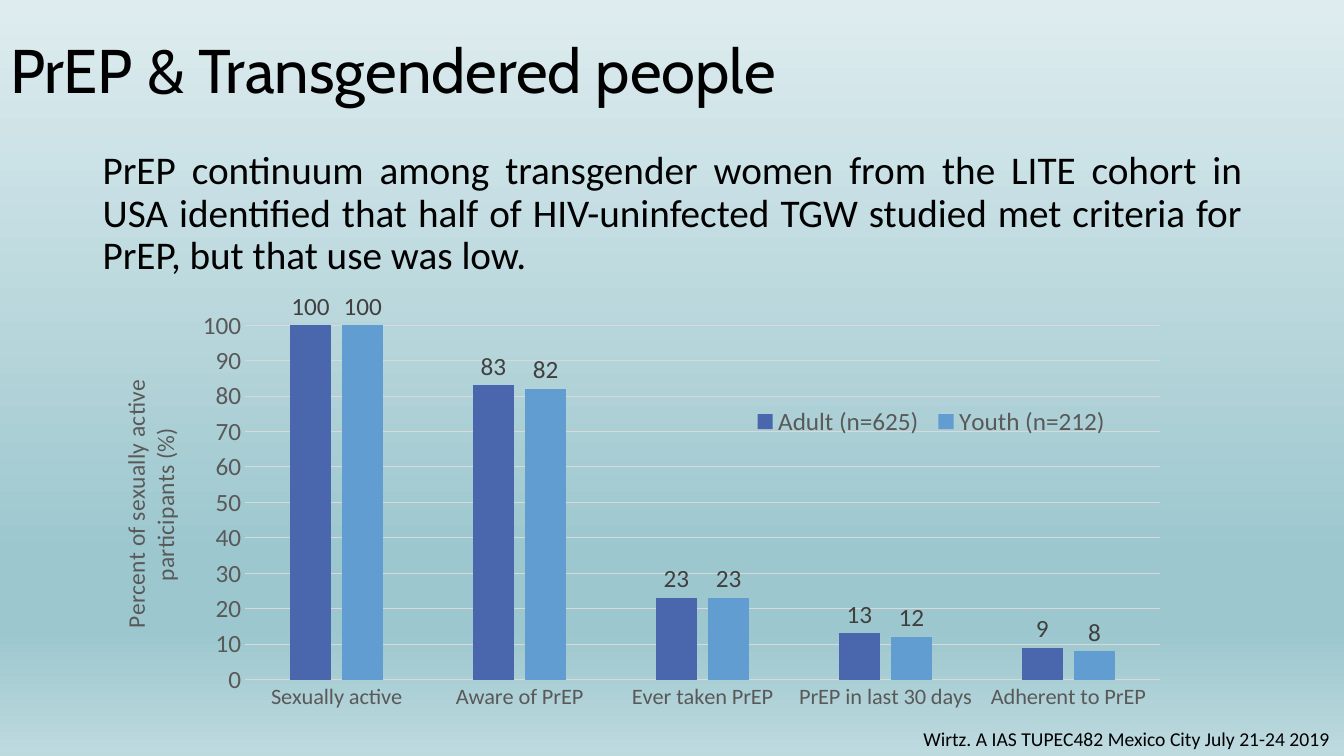
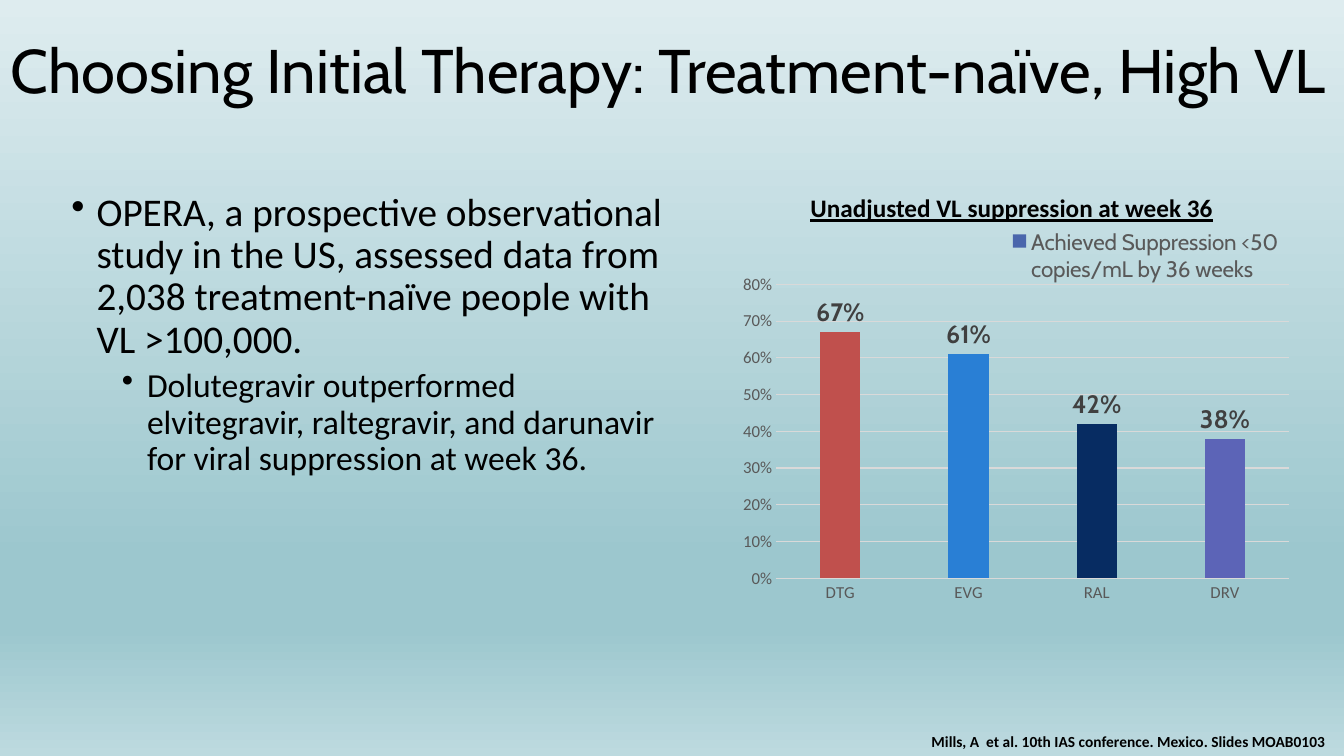
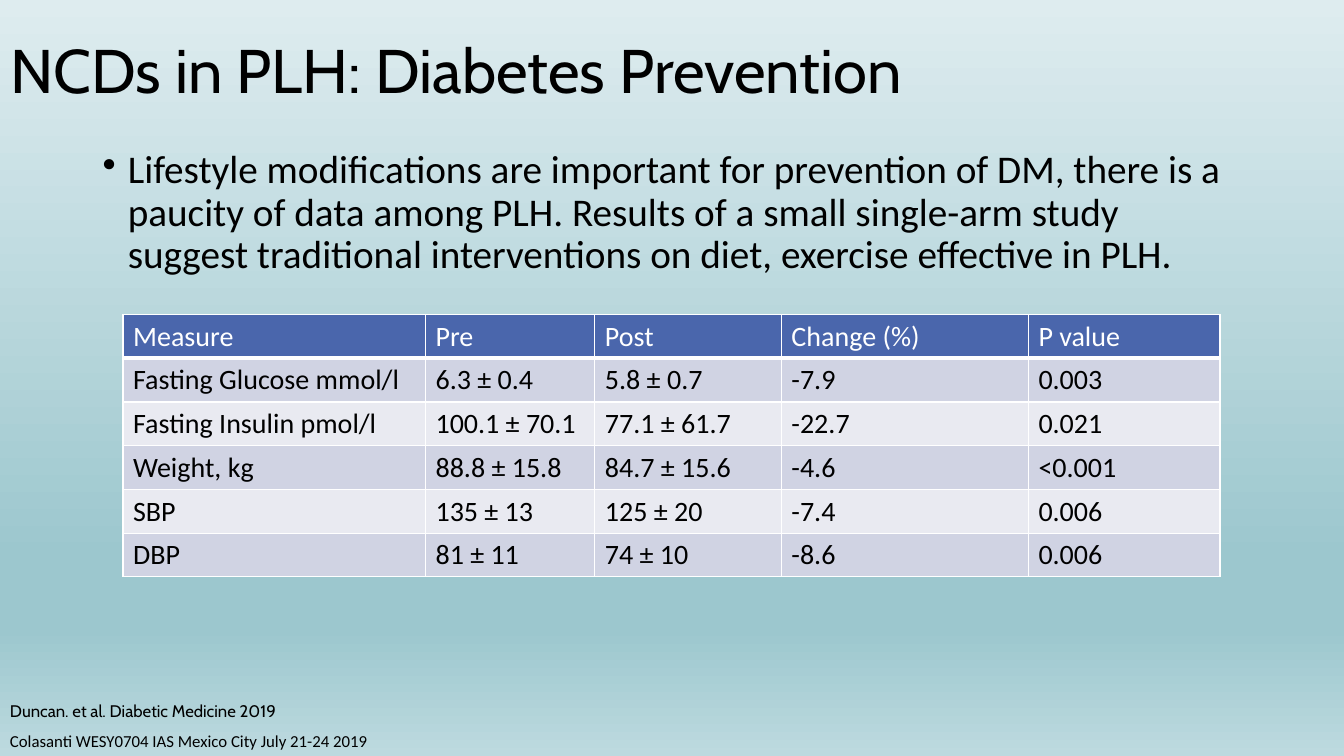
from pptx import Presentation
from pptx.chart.data import CategoryChartData
from pptx.dml.color import RGBColor
from pptx.enum.chart import XL_CHART_TYPE as ChartType
from pptx.enum.chart import XL_LABEL_POSITION as LabelPosition
from pptx.enum.chart import XL_LEGEND_POSITION as LegendPosition
from pptx.enum.chart import XL_TICK_MARK as TickMark
from pptx.enum.text import MSO_ANCHOR as Anchor
from pptx.enum.text import MSO_AUTO_SIZE as AutoSize
from pptx.enum.text import PP_ALIGN as Align
from pptx.oxml import parse_xml
from pptx.oxml.ns import nsdecls
from pptx.util import Inches, Pt

BLACK = RGBColor(0x00, 0x00, 0x00)
WHITE = RGBColor(0xFF, 0xFF, 0xFF)
INDIGO = RGBColor(0x4A, 0x66, 0xAC)
SKY = RGBColor(0x62, 0x9D, 0xD1)
RED = RGBColor(0xC0, 0x50, 0x4D)
BLUE = RGBColor(0x29, 0x7F, 0xD5)
NAVY = RGBColor(0x07, 0x2C, 0x62)
VIOLET = RGBColor(0x5C, 0x64, 0xB7)
BAND_DARK = RGBColor(0xD0, 0xD3, 0xE3)
BAND_LIGHT = RGBColor(0xE9, 0xEA, 0xF1)
GRID_GREY = RGBColor(0xD9, 0xD9, 0xD9)
AXIS_GREY = RGBColor(0x59, 0x59, 0x59)
LABEL_GREY = RGBColor(0x40, 0x40, 0x40)
BACKGROUND_STOPS = [(0, "DEECEF"), (74, "9CC7CE"), (83, "9CC7CE"), (100, "BDDADF")]

HEAD_FONT = "Cabin"
BODY_FONT = "Calibri"


# ---- Text ----

def set_font(font, size, color=BLACK, name=BODY_FONT, bold=False):
    font.size = Pt(size)
    font.name = name
    font.bold = bold
    font.color.rgb = color


def write_text(frame, text, size=28, color=BLACK, name=BODY_FONT, bold=False,
               underline=None, align=Align.LEFT, spacing=None, before=0,
               level=0, bullet_indent=None):
    """Add one paragraph to the frame, using the empty first one if there is one."""
    para = frame.paragraphs[0]
    if para.text:
        para = frame.add_paragraph()
    para.level = level
    if bullet_indent is not None:
        props = para._p.get_or_add_pPr()
        props.set("marL", str(Inches(bullet_indent)))
        props.set("indent", str(Inches(-0.25)))
        props.append(parse_xml(f'<a:buChar {nsdecls("a")} char="•"/>'))
    para.alignment = align
    para.space_before = Pt(before)
    if spacing:
        para.line_spacing = spacing
    span = para.add_run()
    span.text = text
    set_font(span.font, size, color, name, bold)
    span.font.underline = underline


def add_box(page, left, top, width, height):
    box = page.shapes.add_textbox(
        Inches(left), Inches(top), Inches(width), Inches(height))
    box.text_frame.word_wrap = True
    return box.text_frame


def add_citation(page, left, top, width, text, **style):
    write_text(add_box(page, left, top, width, 0.3), text, **style)


# ---- Shared page parts ----

def set_background(master):
    fill = master.background.fill
    fill.gradient()
    fill.gradient_angle = 270
    stops = master.element.xpath("p:cSld/p:bg//a:gsLst")[0]
    for stop in list(stops):
        stops.remove(stop)
    for percent, color in BACKGROUND_STOPS:
        stops.append(parse_xml(
            f'<a:gs {nsdecls("a")} pos="{percent * 1000}">'
            f'<a:srgbClr val="{color}"/></a:gs>'))


def add_page(deck, title, width=11.5):
    page = deck.slides.add_slide(deck.slide_layouts.get_by_name("Title Only"))
    box = page.shapes.title
    box.left, box.top = Inches(0), Inches(0)
    box.width, box.height = Inches(width), Inches(1.45)
    frame = box.text_frame
    frame.auto_size = AutoSize.NONE
    frame.vertical_anchor = Anchor.MIDDLE
    write_text(frame, title, size=44, name=HEAD_FONT, spacing=0.9)
    return page


# ---- Charts ----

def place_part(chart, query, index, x, y, width=None, height=None, inner=False):
    """Fix a chart part at fractions of the chart's size."""
    part = chart.element.xpath(query)[0]
    for old in part.xpath("c:layout"):
        part.remove(old)
    target = '<c:layoutTarget val="inner"/>' if inner else ""
    size = f'<c:w val="{width}"/><c:h val="{height}"/>' if width else ""
    part.insert(index, parse_xml(
        f'<c:layout {nsdecls("c")}><c:manualLayout>{target}'
        '<c:xMode val="edge"/><c:yMode val="edge"/>'
        f'<c:x val="{x}"/><c:y val="{y}"/>{size}</c:manualLayout></c:layout>'))


def style_axis(axis, size):
    axis.major_tick_mark = axis.minor_tick_mark = TickMark.NONE
    set_font(axis.tick_labels.font, size, AXIS_GREY)


def add_column_chart(page, area, categories, series, colors, number_format, top_value,
                     step, axis_sizes, plot_area, legend_area, legend_position,
                     legend_style, label_style):
    data = CategoryChartData(number_format=number_format)
    data.categories = categories
    for name, values in series:
        data.add_series(name, values)
    chart = page.shapes.add_chart(
        ChartType.COLUMN_CLUSTERED, *map(Inches, area), data).chart
    set_font(chart.font, 18)
    chart.has_title = False

    # Axes
    category_axis, value_axis = chart.category_axis, chart.value_axis
    style_axis(category_axis, axis_sizes[0])
    style_axis(value_axis, axis_sizes[1])
    value_axis.minimum_scale, value_axis.maximum_scale = 0, top_value
    value_axis.major_unit = step
    value_axis.tick_labels.number_format = number_format
    value_axis.tick_labels.number_format_is_linked = False
    value_axis.format.line.fill.background()
    for line in (category_axis.format.line, value_axis.major_gridlines.format.line):
        line.color.rgb = GRID_GREY
        line.width = Pt(0.75)

    # Columns and their labels
    plot = chart.plots[0]
    plot.gap_width, plot.overlap = 219, -27
    plot.vary_by_categories = False
    for column, color in zip(plot.series, colors):
        column.format.fill.solid()
        column.format.fill.fore_color.rgb = color
    plot.has_data_labels = True
    labels = plot.data_labels
    labels.show_value = True
    labels.position = LabelPosition.OUTSIDE_END
    labels.number_format = number_format
    labels.number_format_is_linked = False
    set_font(labels.font, 18, LABEL_GREY, **label_style)

    # Legend
    chart.has_legend = True
    chart.legend.position = legend_position
    chart.legend.include_in_layout = False
    set_font(chart.legend.font, color=AXIS_GREY, **legend_style)
    place_part(chart, ".//c:plotArea", 0, *plot_area, inner=True)
    place_part(chart, ".//c:legend", 1, *legend_area)
    return chart


def add_axis_title(chart, text, x, y):
    frame = chart.value_axis.axis_title.text_frame
    write_text(frame, text, size=17, color=AXIS_GREY, align=Align.CENTER)
    title = ".//c:valAx/c:title"
    body = chart.element.xpath(title + "//a:bodyPr")[0]
    body.set("rot", "-5400000")
    body.set("vert", "horz")
    place_part(chart, title, 1, x, y)


# ---- Table ----

def set_borders(cell, bottom):
    props = cell._tc.get_or_add_tcPr()
    widths = {"lnL": 1, "lnR": 1, "lnT": 1, "lnB": bottom}
    for index, (side, width) in enumerate(widths.items()):
        props.insert(index, parse_xml(
            f'<a:{side} {nsdecls("a")} w="{Pt(width)}"><a:solidFill>'
            f'<a:srgbClr val="{WHITE}"/></a:solidFill></a:{side}>'))


def add_measure_table(page, left, top, widths, row_height, rows):
    table = page.shapes.add_table(
        len(rows), len(widths), Inches(left), Inches(top),
        Inches(sum(widths)), Inches(row_height * len(rows))).table
    table.horz_banding = False
    for column, width in zip(table.columns, widths):
        column.width = Inches(width)
    for r, texts in enumerate(rows):
        header = r == 0
        band = BAND_DARK if r % 2 else BAND_LIGHT
        for c, text in enumerate(texts):
            cell = table.cell(r, c)
            cell.fill.solid()
            cell.fill.fore_color.rgb = INDIGO if header else band
            write_text(cell.text_frame, text, size=20,
                       color=WHITE if header else BLACK)
            set_borders(cell, 3 if header else 1)


# ---- Pages ----

def build_continuum_page(deck):
    page = add_page(deck, "PrEP & Transgendered people")
    write_text(
        add_box(page, 0.92, 1.45, 11.5, 1.4),
        "PrEP continuum among transgender women from the LITE cohort in USA "
        "identified that half of HIV-uninfected TGW studied met criteria for PrEP, "
        "but that use was low.", align=Align.JUSTIFY, spacing=0.9)
    chart = add_column_chart(
        page, (0.92, 2.89, 10.8, 4.52),
        ["Sexually active", "Aware of PrEP", "Ever taken PrEP",
         "PrEP in last 30 days", "Adherent to PrEP"],
        [("Adult (n=625)", [100, 83, 23, 13, 9]),
         ("Youth (n=212)", [100, 82, 23, 12, 8])],
        [INDIGO, SKY], "0", 100, 10, axis_sizes=(16, 18),
        plot_area=(0.14, 0.06, 0.84, 0.79), legend_area=(0.6, 0.23, 0.34, 0.09),
        legend_position=LegendPosition.BOTTOM, legend_style={"size": 18},
        label_style={})
    add_axis_title(chart, "Percent of sexually active participants (%)", 0.02, 0.18)
    add_citation(page, 9.06, 7.16, 4.27,
                 "Wirtz. A IAS TUPEC482 Mexico City July 21-24 2019", size=14)


def build_therapy_page(deck):
    page = add_page(deck, "Choosing Initial Therapy: Treatment-naïve, High VL", 13.33)
    frame = add_box(page, 0.61, 1.86, 6.19, 4.76)
    write_text(
        frame, "OPERA, a prospective observational study in the US, assessed data "
        "from 2,038 treatment-naïve people with VL >100,000.",
        spacing=0.9, bullet_indent=0.25)
    write_text(
        frame, "Dolutegravir outperformed elvitegravir, raltegravir, and darunavir "
        "for viral suppression at week 36.",
        size=24, spacing=0.9, before=5, level=1, bullet_indent=0.75)
    chart = add_column_chart(
        page, (7.37, 2.26, 5.47, 3.74), ["DTG", "EVG", "RAL", "DRV"],
        [("Achieved Suppression <50 copies/mL by 36 weeks", [0.67, 0.61, 0.42, 0.38])],
        [INDIGO], "0%", 0.8, 0.1, axis_sizes=(12, 12),
        plot_area=(0.06, 0.15, 0.93, 0.78), legend_area=(0.47, 0, 0.52, 0.15),
        legend_position=LegendPosition.TOP,
        legend_style={"size": 16, "name": HEAD_FONT},
        label_style={"name": HEAD_FONT, "bold": True})
    for index, color in enumerate([RED, BLUE, NAVY, VIOLET]):
        fill = chart.plots[0].series[0].points[index].format.fill
        fill.solid()
        fill.fore_color.rgb = color
    write_text(add_box(page, 7.94, 1.86, 4.64, 0.4),
               "Unadjusted VL suppression at week 36",
               size=18, bold=True, underline=True)
    add_citation(page, 9.14, 7.21, 4.19,
                 "Mills, A  et al. 10th IAS conference. Mexico. Slides MOAB0103",
                 size=11, bold=True)


def build_diabetes_page(deck):
    page = add_page(deck, "NCDs in PLH: Diabetes Prevention")
    write_text(
        add_box(page, 0.92, 1.44, 11.5, 1.4),
        "Lifestyle modifications are important for prevention of DM, there is a "
        "paucity of data among PLH. Results of a small single-arm study suggest "
        "traditional interventions on diet, exercise effective in PLH.",
        spacing=0.9, bullet_indent=0.25)
    add_measure_table(page, 1.22, 3.12, [3, 1.68, 1.85, 2.45, 1.9], 0.43, [
        ["Measure", "Pre", "Post", "Change (%)", "P value"],
        ["Fasting Glucose mmol/l", "6.3 ± 0.4", "5.8 ± 0.7", "-7.9", "0.003"],
        ["Fasting Insulin pmol/l", "100.1 ± 70.1", "77.1 ± 61.7", "-22.7", "0.021"],
        ["Weight, kg", "88.8 ± 15.8", "84.7 ± 15.6", "-4.6", "<0.001"],
        ["SBP", "135 ± 13", "125 ± 20", "-7.4", "0.006"],
        ["DBP", "81 ± 11", "74 ± 10", "-8.6", "0.006"],
    ])
    add_citation(page, 0, 6.9, 4.65, "Duncan. et al. Diabetic Medicine 2019",
                 size=12, name=HEAD_FONT)
    add_citation(page, 0, 7.2, 4.65,
                 "Colasanti WESY0704 IAS Mexico City July 21-24 2019", size=12)


def main():
    deck = Presentation()
    deck.slide_width, deck.slide_height = Inches(13.33), Inches(7.5)
    set_background(deck.slide_master)
    build_continuum_page(deck)
    build_therapy_page(deck)
    build_diabetes_page(deck)
    deck.save("out.pptx")


if __name__ == "__main__":
    main()
